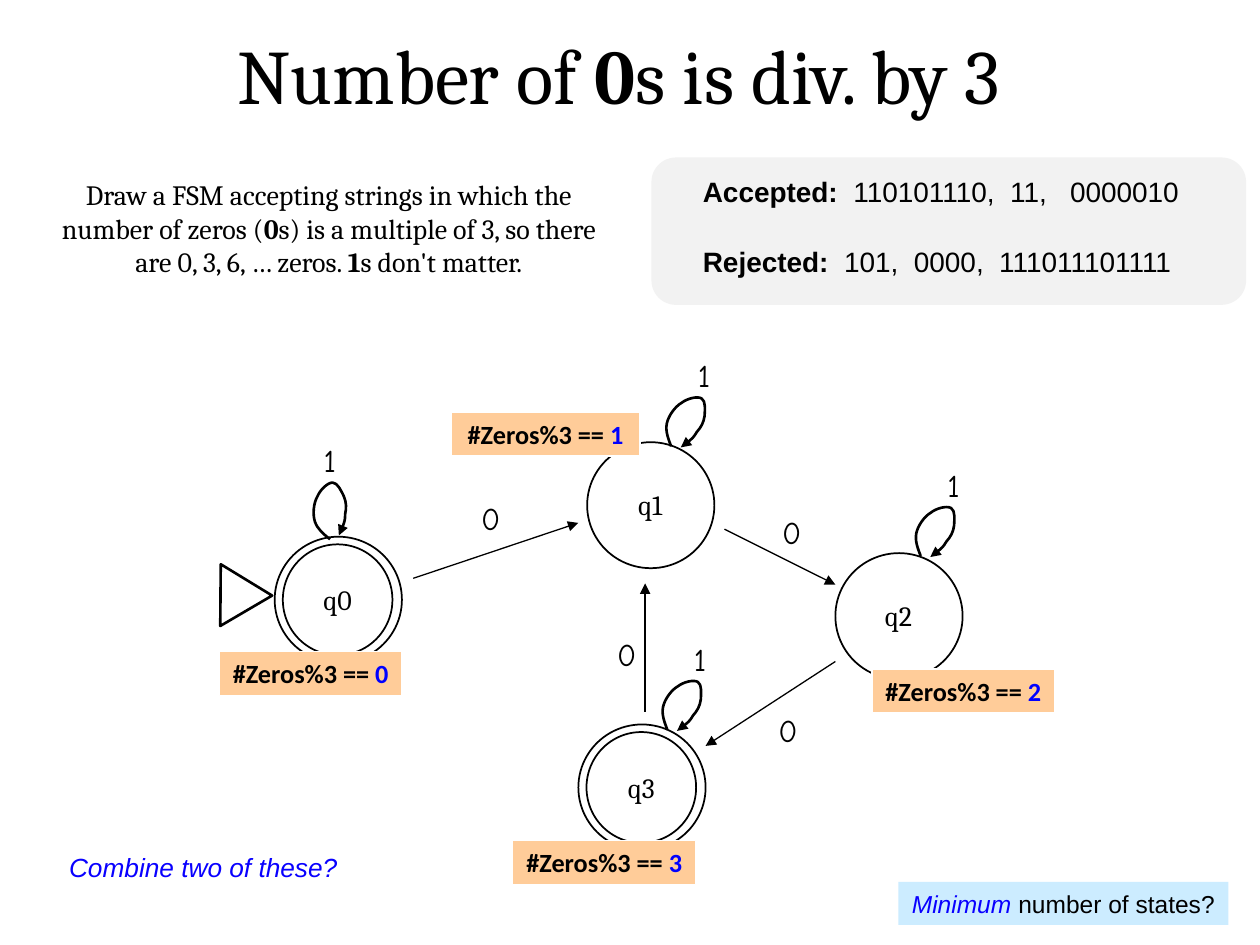
from typing import NamedTuple

from pptx import Presentation
from pptx.dml.color import RGBColor
from pptx.enum.shapes import MSO_CONNECTOR as Connector, MSO_SHAPE as Shape
from pptx.enum.text import MSO_ANCHOR as Anchor, PP_ALIGN as Align
from pptx.oxml.ns import qn
from pptx.util import Inches, Pt
from lxml.etree import SubElement

# Grid of 100 columns by 75 rows; one cell is a tenth of an inch
COLUMNS, ROWS, CELL = 100, 75, 0.1
COLORS = {
    "ink": "000000", "panel": "F2F2F2", "note": "CCECFF", "accent": "0900FF",
    "tag": "FFCC99", "tag_edge": "FFFFFF", "digit": "0000FF",
}
# Self-loop in hundredths of an inch: a start, then three points per curve
LOOP = [
    (14, 45), (9, 41), (4, 37), (2, 31), (0, 25), (1, 16), (4, 11),
    (6, 6), (12, 0), (16, 0), (20, 0), (23, 7), (25, 11),
    (27, 16), (27, 20), (26, 25), (26, 30), (24, 36), (21, 42),
]


class Box(NamedTuple):
    left: float
    top: float
    width: float
    height: float


class Run(NamedTuple):
    text: str
    bold: bool = False
    italic: bool = False
    color: str = "ink"


class State(NamedTuple):
    left: float
    top: float
    accepting: bool
    tag: Box
    loop: tuple[float, float]
    tilt: float


class Transition(NamedTuple):
    start: tuple[float, float]
    end: tuple[float, float]
    label: tuple[float, float]


STATES = [
    State(21.8, 42.6, True, Box(17.4, 51.7, 14.5, 3.5), (24.8, 38.3), 0),
    State(46.6, 35.1, False, Box(35.8, 32.7, 15, 3.5), (53, 31.2), 29.8),
    State(66.3, 43.9, False, Box(69.2, 53.1, 14.5, 3.5), (72.8, 39.9), 29.8),
    State(45.9, 57.5, True, Box(40.7, 66.7, 14.5, 3.5), (52.7, 53.7), 29.8),
]
TRANSITIONS = [
    Transition((32.8, 45.9), (45.9, 41.5), (37.2, 39.1)),
    Transition((57.5, 42), (66.3, 46.4), (61.1, 40.2)),
    Transition((66.3, 52.5), (56, 59.2), (60.8, 55.9)),
    Transition((51.2, 56.5), (51.2, 46.3), (48, 49.9)),
]


def cells(*counts: float) -> list[int]:
    return [Inches(count * CELL) for count in counts]


def rgb(name: str) -> RGBColor:
    return RGBColor.from_string(COLORS[name])


def write(shape, *paragraphs: list[Run], font: str, size: float,
          align: Align = Align.CENTER, anchor: Anchor = Anchor.TOP,
          wrap: bool = True, line_spacing: float = 1, gap: float = 0) -> None:
    frame = shape.text_frame
    frame.word_wrap, frame.vertical_anchor = wrap, anchor
    for index, runs in enumerate(paragraphs):
        paragraph = frame.add_paragraph() if index else frame.paragraphs[0]
        paragraph.alignment, paragraph.line_spacing = align, line_spacing
        paragraph.space_before = Pt(gap if index else 0)
        for item in runs:
            run = paragraph.add_run()
            run.text = item.text
            run.font.name, run.font.size = font, Pt(size)
            run.font.bold, run.font.italic = item.bold, item.italic
            run.font.color.rgb = rgb(item.color)


def add_text(slide, box: Box, *paragraphs: list[Run], **text_format) -> None:
    write(slide.shapes.add_textbox(*cells(*box)), *paragraphs, **text_format)


def add_symbol(slide, left: float, top: float, symbol: str) -> None:
    add_text(slide, Box(left, top, 5, 4), [Run(symbol)],
             font="Comic Neue", size=18, align=Align.LEFT)


def add_form(slide, kind: Shape, box: Box, fill: str | None = None,
             edge: str | None = None, width: float = 1):
    shape = slide.shapes.add_shape(kind, *cells(*box))
    shape.shadow.inherit = False
    if fill:
        shape.fill.solid()
        shape.fill.fore_color.rgb = rgb(fill)
    else:
        shape.fill.background()
    if edge:
        shape.line.color.rgb = rgb(edge)
        shape.line.width = Pt(width)
    else:
        shape.line.fill.background()
    return shape


def point_arrow(shape, width: float) -> None:
    shape.line.color.rgb = rgb("ink")
    shape.line.width = Pt(width)
    outline = shape.line._get_or_add_ln()
    SubElement(outline, qn("a:tailEnd"), type="triangle")


def add_loop(slide, state: State) -> None:
    builder = slide.shapes.build_freeform(*LOOP[0], scale=Inches(0.01))
    builder.add_line_segments(LOOP[1:], close=False)
    shape = builder.convert_to_shape(*cells(*state.loop))
    # Join every three line points into one Bezier curve
    segments = shape._element.xpath(".//a:lnTo")
    for first in range(0, len(segments), 3):
        curve = segments[first]
        curve.tag = qn("a:cubicBezTo")
        for segment in segments[first + 1:first + 3]:
            curve.append(segment[0])
            segment.getparent().remove(segment)
    shape.rotation = state.tilt
    shape.shadow.inherit = False
    shape.fill.background()
    point_arrow(shape, 1.5)
    shift, rise = (1.4, 3.4) if state.tilt else (-0.1, 3.8)
    add_symbol(slide, state.loop[0] + shift, state.loop[1] - rise, "1")


def add_state(slide, number: int, state: State) -> None:
    add_form(slide, Shape.OVAL, Box(state.left, state.top, 10.1, 10), edge="ink")
    if state.accepting:
        add_form(slide, Shape.OVAL,
                 Box(state.left + 0.65, state.top + 0.6, 8.7, 8.8), edge="ink")
    add_text(slide, Box(state.left + 2.75, state.top + 3.1, 4.5, 3.7),
             [Run(f"q{number}")], font="Cambria", size=16,
             anchor=Anchor.MIDDLE, wrap=False)
    add_loop(slide, state)


def add_transition(slide, transition: Transition) -> None:
    arrow = slide.shapes.add_connector(
        Connector.STRAIGHT, *cells(*transition.start, *transition.end))
    point_arrow(arrow, 0.75)
    SubElement(arrow._element.spPr, qn("a:effectLst"))
    add_symbol(slide, *transition.label, "0")


def add_tag(slide, number: int, state: State) -> None:
    tag = add_form(slide, Shape.RECTANGLE, state.tag, "tag", "tag_edge", 0.75)
    write(tag, [Run("#Zeros%3 == ", bold=True), Run(str(number), bold=True, color="digit")],
          font="Calibri", size=15, wrap=False)


def main() -> None:
    presentation = Presentation()
    presentation.slide_width, presentation.slide_height = cells(COLUMNS, ROWS)
    slide = presentation.slides.add_slide(presentation.slide_layouts[6])

    # Title, task and examples
    add_form(slide, Shape.ROUNDED_RECTANGLE, Box(51.7, 12.5, 47.2, 11.7), "panel")
    add_text(slide, Box(5.2, 1.7, 87.8, 8.3),
             [Run("Number of "), Run("0", bold=True), Run("s is div. by 3")],
             font="Cambria", size=44)
    add_text(slide, Box(3.2, 13.6, 45.8, 9.1),
             [Run("Draw a FSM accepting strings in which the number of zeros ("),
              Run("0", bold=True), Run("s) is a multiple of 3, so there are 0, 3, 6, … zeros. "),
              Run("1", bold=True), Run("s don't matter.")],
             font="Cambria", size=16)
    add_text(slide, Box(54.8, 14.3, 42.5, 8.5),
             [Run("Accepted:  ", bold=True), Run("110101110,  11,   0000010")],
             [Run("Rejected:  ", bold=True), Run("101,  0000,  111011101111")],
             font="Arial", size=16, align=Align.LEFT, line_spacing=0.6, gap=28.6)

    # State machine; tags lie over the circles
    start = add_form(slide, Shape.ISOSCELES_TRIANGLE, Box(17.1, 45.2, 4.9, 4.1),
                     edge="ink", width=1.5)
    start.rotation = 90.5
    for transition in TRANSITIONS:
        add_transition(slide, transition)
    for number, state in enumerate(STATES):
        add_state(slide, number, state)
    for number, state in enumerate(STATES):
        add_tag(slide, number, state)

    # Closing questions
    add_text(slide, Box(4.5, 67.1, 23.6, 3.5),
             [Run("Combine two of these?", italic=True, color="accent")],
             font="Arial", size=15, align=Align.LEFT, wrap=False)
    note = add_form(slide, Shape.RECTANGLE, Box(71.3, 70, 26.2, 3.4), "note")
    write(note, [Run("Minimum ", italic=True, color="accent"), Run("number of states?")],
          font="Arial", size=14, anchor=Anchor.MIDDLE, wrap=False)

    presentation.save("out.pptx")


if __name__ == "__main__":
    main()
